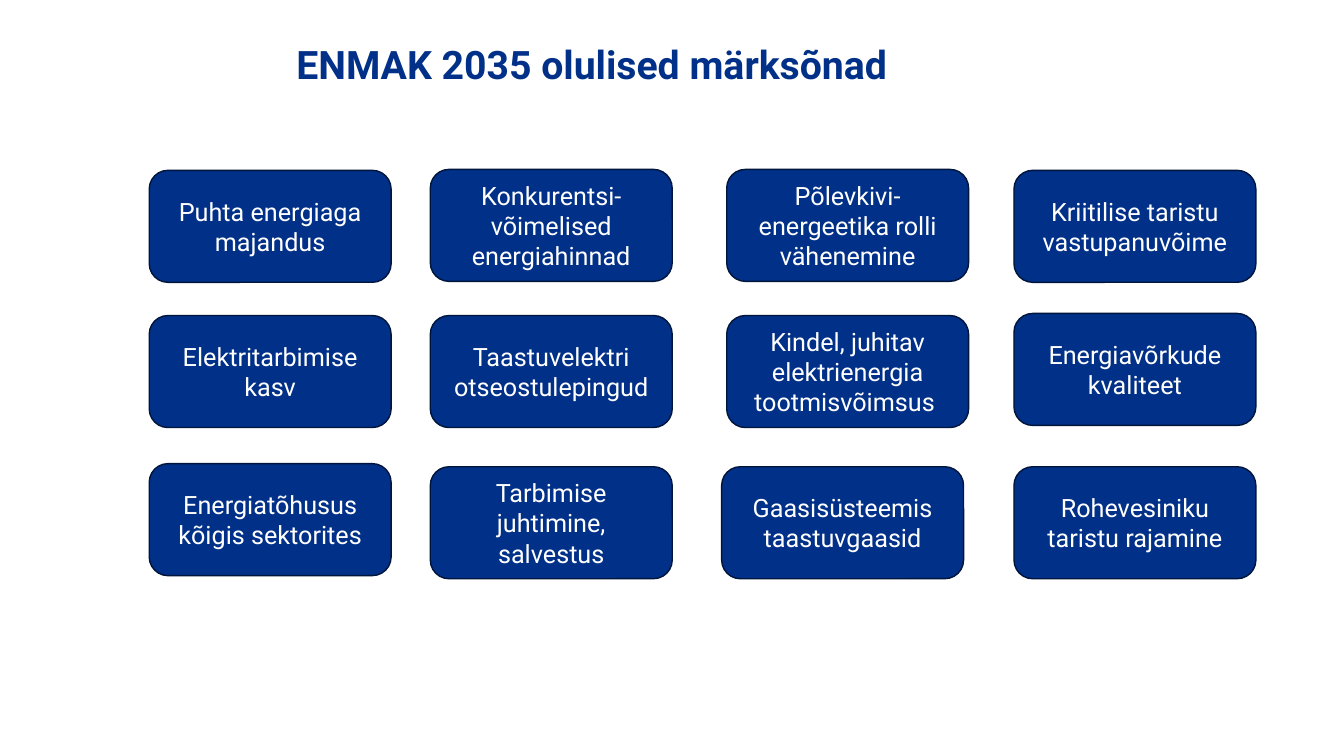
"""Build the ENMAK 2035 keywords slide."""
from pptx import Presentation
from pptx.dml.color import RGBColor
from pptx.enum import shapes, text
from pptx.util import Pt

TITLE = "ENMAK 2035 olulised märksõnad"
KEYWORDS = [
    (106.6, 121.7, "Puhta energiaga majandus"),
    (307.4, 121, "Konkurentsi-võimelised energiahinnad"),
    (519.1, 121, "Põlevkivi-energeetika rolli vähenemine"),
    (724.3, 121.7, "Kriitilise taristu vastupanuvõime"),
    (106.6, 225.4, "Elektritarbimise kasv"),
    (307.4, 225.4, "Taastuvelektri otseostulepingud"),
    (519.1, 225.4, "Kindel, juhitav elektrienergia tootmisvõimsus "),
    (724.3, 223.9, "Energiavõrkude kvaliteet"),
    (106.6, 331.2, "Energiatõhusus kõigis sektorites"),
    (307.4, 333.4, "Tarbimise juhtimine, salvestus"),
    (515.5, 333.4, "Gaasisüsteemis taastuvgaasid"),
    (724.3, 333.4, "Rohevesiniku\ntaristu rajamine"),
]
BOX_WIDTH, BOX_HEIGHT = Pt(172.8), Pt(80)
FONT = "Roboto"
BLUE = RGBColor(0x00, 0x30, 0x87)
NAVY = RGBColor(0x00, 0x15, 0x3B)
WHITE = RGBColor(0xFF, 0xFF, 0xFF)


def write(frame, words, size, color, align, anchor, bold=False):
    frame.text = words
    frame.word_wrap = True
    frame.auto_size = text.MSO_AUTO_SIZE.NONE
    frame.vertical_anchor = anchor
    for para in frame.paragraphs:
        para.alignment = align
        for span in para.runs:
            span.font.name = FONT
            span.font.size = Pt(size)
            span.font.bold = bold
            span.font.color.rgb = color


def add_keyword(page, left, top, words):
    box = page.shapes.add_shape(shapes.MSO_SHAPE.ROUNDED_RECTANGLE,
                                Pt(left), Pt(top), BOX_WIDTH, BOX_HEIGHT)
    box.shadow.inherit = False
    box.fill.solid()
    box.fill.fore_color.rgb = BLUE
    box.line.color.rgb = NAVY
    box.line.width = Pt(1)
    write(box.text_frame, words, 18, WHITE,
          text.PP_ALIGN.CENTER, text.MSO_ANCHOR.MIDDLE)


def main():
    deck = Presentation()
    deck.slide_width, deck.slide_height = Pt(960), Pt(540)
    page = deck.slides.add_slide(deck.slide_layouts[5])
    title = page.shapes.title
    title.left, title.top = Pt(204.5), Pt(28.8)
    title.width, title.height = Pt(709.2), Pt(80)
    write(title.text_frame, TITLE, 28, BLUE,
          text.PP_ALIGN.LEFT, text.MSO_ANCHOR.TOP, bold=True)
    title.text_frame.paragraphs[0].line_spacing = 0.9
    for left, top, words in KEYWORDS:
        add_keyword(page, left, top, words)
    deck.save("out.pptx")


if __name__ == "__main__":
    main()
